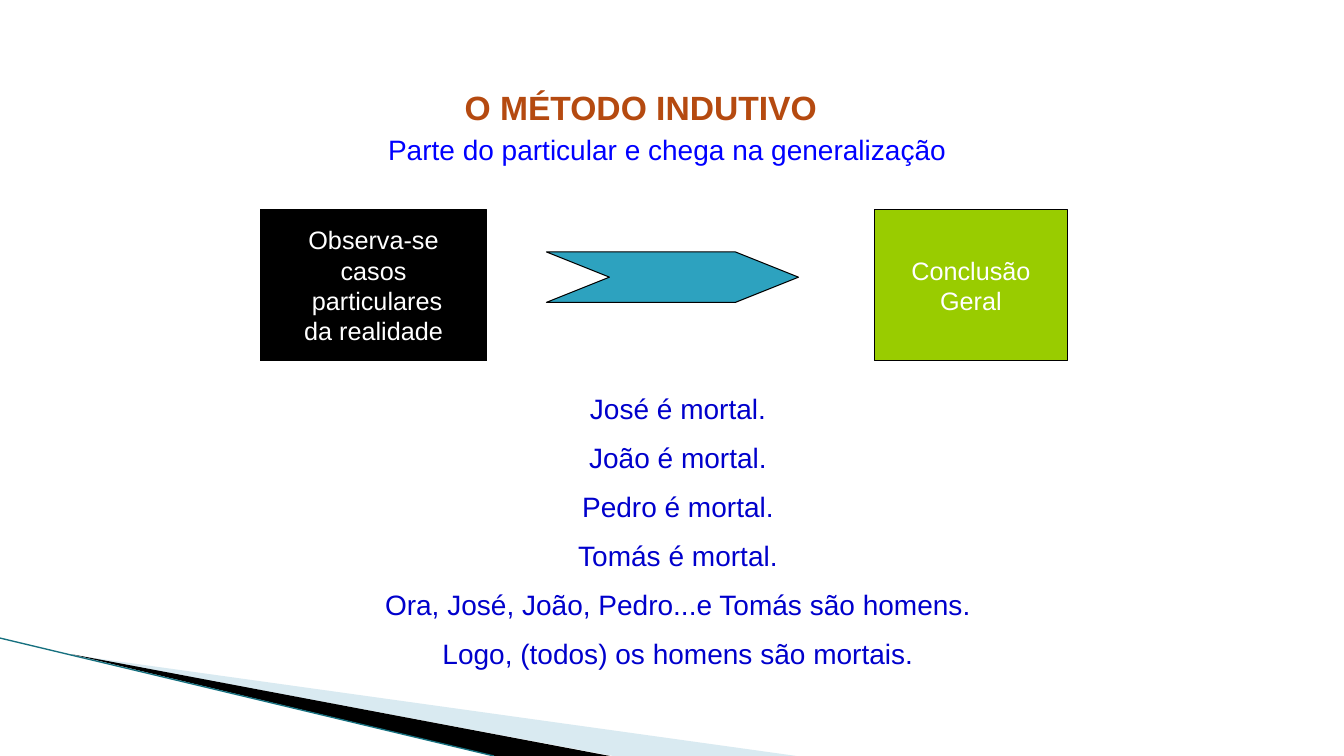
import pptx
import pptx.util
import pptx.dml.color
import pptx.enum.shapes
import pptx.enum.text
import pptx.oxml.ns
from dataclasses import dataclass
from lxml import etree

Inches = pptx.util.Inches
Pt = pptx.util.Pt
rgb = pptx.dml.color.RGBColor.from_string
qn = pptx.oxml.ns.qn
Align = pptx.enum.text.PP_ALIGN
Anchor = pptx.enum.text.MSO_ANCHOR
Shape = pptx.enum.shapes.MSO_SHAPE


@dataclass(frozen=True)
class Theme:
    font: str = "Arial"
    title_size: int = 24
    text_size: int = 20
    box_size: int = 18
    title: str = "B54A10"
    subtitle: str = "0000FF"
    example: str = "0000CC"
    black: str = "000000"
    white: str = "FFFFFF"
    green: str = "99CC00"
    teal: str = "2DA2BF"
    pale_blue: str = "A0CBDC"
    edge: str = "16707F"


theme = Theme()


def write(shape, text, size, color, bold=False, align=Align.CENTER,
          anchor=Anchor.TOP, wrap=True, gap=0):
    frame = shape.text_frame
    frame.word_wrap = wrap
    frame.auto_size = pptx.enum.text.MSO_AUTO_SIZE.NONE
    frame.vertical_anchor = anchor
    for index, line in enumerate(text.split("\n")):
        paragraph = frame.paragraphs[0] if index == 0 else frame.add_paragraph()
        paragraph.alignment = align
        paragraph.space_before = Pt(gap if index else 0)
        properties = paragraph._p.get_or_add_pPr()
        properties.set("marL", "0")
        properties.set("indent", "0")
        etree.SubElement(properties, qn("a:buNone"))
        run = paragraph.add_run()
        run.text = line
        run.font.name = theme.font
        run.font.size = Pt(size)
        run.font.bold = bold
        run.font.color.rgb = rgb(color)


def place(shape, left, top, width, height):
    shape.left, shape.top = Inches(left), Inches(top)
    shape.width, shape.height = Inches(width), Inches(height)


presentation = pptx.Presentation()
presentation.slide_width = Inches(13.33)
presentation.slide_height = Inches(7.5)
slide = presentation.slides.add_slide(presentation.slide_layouts[1])
shapes = slide.shapes

# Corner wedges
wedges = [
    ([(0.73, 6.5), (7.9, 7.5), (6.08, 7.5)], theme.pale_blue, 40),
    ([(0.71, 6.49), (6.05, 7.5), (4.9, 7.5)], theme.black, 100),
]
for corners, color, opacity in wedges:
    points = [(Inches(x), Inches(y)) for x, y in corners]
    builder = shapes.build_freeform(*points[0])
    builder.add_line_segments(points[1:], close=True)
    wedge = builder.convert_to_shape()
    wedge.shadow.inherit = False
    wedge.fill.solid()
    wedge.fill.fore_color.rgb = rgb(color)
    wedge.line.fill.background()
    if opacity < 100:
        fill_color = wedge._element.spPr.find(qn("a:solidFill"))[0]
        etree.SubElement(fill_color, qn("a:alpha"), val=str(opacity * 1000))

# Edge line along the wedges
edge = shapes.add_connector(
    pptx.enum.shapes.MSO_CONNECTOR.STRAIGHT,
    Inches(0), Inches(6.33), Inches(4.9), Inches(7.5))
edge.line.color.rgb = rgb(theme.edge)
edge.line.width = Pt(0.95)
etree.SubElement(edge._element.spPr, qn("a:effectLst"))

# Title and subtitle
title = shapes.title
place(title, 4.15, 0.81, 4.41, 0.5)
write(title, "O MÉTODO INDUTIVO", theme.title_size, theme.title, bold=True)

subtitle = shapes.add_textbox(Inches(3.75), Inches(1.27), Inches(6.25), Inches(0.43))
write(subtitle, "Parte do particular e chega na generalização",
      theme.text_size, theme.subtitle, align=Align.LEFT)

# From particular cases to the general conclusion
steps = [
    (Shape.RECTANGLE, 2.58, 2.08, 2.25, 1.5, theme.black,
     "Observa-se\ncasos\n particulares\nda realidade"),
    (Shape.CHEVRON, 5.42, 2.5, 2.5, 0.5, theme.teal, ""),
    (Shape.RECTANGLE, 8.67, 2.08, 1.92, 1.5, theme.green, "Conclusão\nGeral"),
]
for preset, left, top, width, height, color, label in steps:
    step = shapes.add_shape(preset, Inches(left), Inches(top),
                            Inches(width), Inches(height))
    step.shadow.inherit = False
    step.fill.solid()
    step.fill.fore_color.rgb = rgb(color)
    step.line.color.rgb = rgb(theme.black)
    step.line.width = Pt(0.75)
    if preset == Shape.CHEVRON:
        step.adjustments[0] = 1.25
    if label:
        write(step, label, theme.box_size, theme.white,
              anchor=Anchor.MIDDLE, wrap=False)

# Worked example
example = slide.placeholders[1]
place(example, 2.81, 3.83, 7.83, 2.93)
write(example,
      "José é mortal.\n"
      "João é mortal.\n"
      "Pedro é mortal.\n"
      "Tomás é mortal.\n"
      "Ora, José, João, Pedro...e Tomás são homens.\n"
      "Logo, (todos) os homens são mortais.",
      theme.text_size, theme.example, gap=11)

presentation.save("out.pptx")
